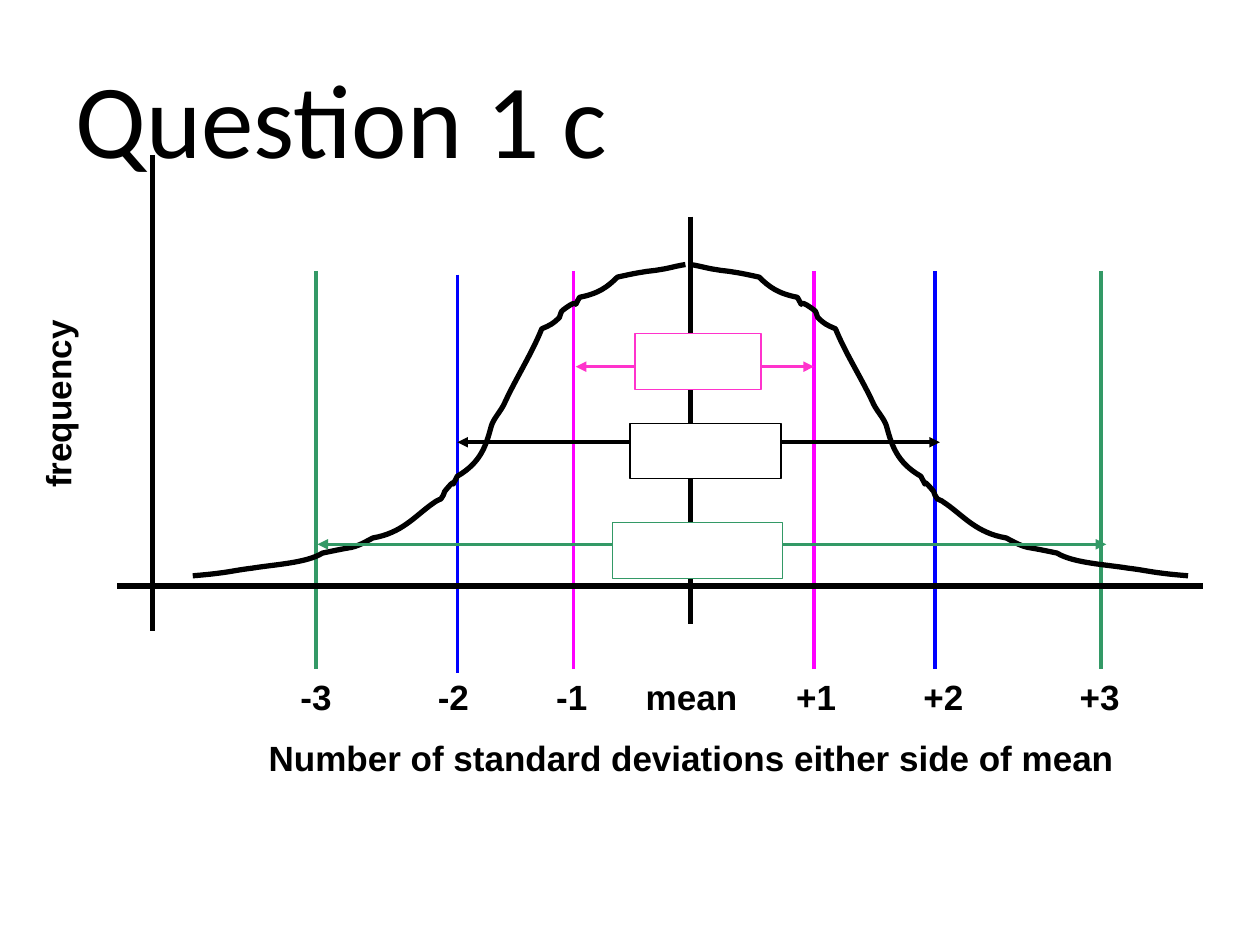
from dataclasses import dataclass

from lxml.etree import SubElement
from pptx import Presentation
from pptx.dml.color import RGBColor
from pptx.enum.shapes import MSO_CONNECTOR, MSO_SHAPE
from pptx.enum.text import MSO_ANCHOR, PP_ALIGN
from pptx.oxml.ns import qn
from pptx.util import Inches, Pt


@dataclass(frozen=True)
class Theme:
    black: str = "000000"
    white: str = "FFFFFF"
    green: str = "339966"
    blue: str = "0000FF"
    magenta: str = "FF00FF"
    pink: str = "FF33CC"
    title_size: int = 60
    label_size: int = 20
    axis_width: float = 3
    marker_width: float = 2
    outline_width: float = 0.75


THEME = Theme()

TITLE = "Question 1 c"
VERTICAL_LABEL = "frequency"
HORIZONTAL_LABEL = "Number of standard deviations either side of mean"

MEAN = 5.48
LABEL_CENTER = 5.49
# label, label centre, marker x, marker top, colour
DEVIATIONS = [
    ("-3", 2.51, 2.51, 2.15, THEME.green),
    ("-2", 3.6, 3.63, 2.18, THEME.blue),
    ("-1", 4.54, 4.55, 2.15, THEME.magenta),
    ("mean", LABEL_CENTER, None, None, None),
    ("+1", 6.48, 6.46, 2.15, THEME.magenta),
    ("+2", 7.49, 7.42, 2.15, THEME.blue),
    ("+3", 8.73, 8.74, 2.15, THEME.green),
]
MARKER_HEIGHT = 3.16

# start and end of each axis line
AXES = [
    ((0.93, 4.65), (9.55, 4.65)),
    ((MEAN, 1.72), (MEAN, 4.95)),
    ((1.21, 1.23), (1.21, 5.01)),
]

# arrow from, arrow to, arrow y, box left, box top, box width, colour
RANGES = [
    (2.52, 8.78, 4.32, 4.86, 4.15, 1.35, THEME.green),
    (4.57, 6.46, 2.91, 5.04, 2.65, 1.0, THEME.pink),
    (3.63, 7.46, 3.51, 5.0, 3.36, 1.2, THEME.black),
]
RANGE_BOX_HEIGHT = 0.44

# Left half of the bell: a start, then two controls and an end per segment
BELL_START = (5.44, 2.1)
BELL_SEGMENTS = [
    ((5.37, 2.11), (5.31, 2.13), (5.24, 2.14)),
    ((5.19, 2.15), (5.15, 2.15), (5.1, 2.16)),
    ((5.03, 2.17), (4.9, 2.2), (4.9, 2.2)),
    ((4.82, 2.28), (4.75, 2.33), (4.6, 2.36)),
    ((4.52, 2.5), (4.64, 2.33), (4.47, 2.46)),
    ((4.45, 2.47), (4.45, 2.5), (4.44, 2.52)),
    ((4.39, 2.57), (4.37, 2.58), (4.3, 2.61)),
    ((4.22, 2.81), (4.09, 3.01), (4, 3.21)),
    ((3.97, 3.27), (3.92, 3.32), (3.9, 3.38)),
    ((3.86, 3.53), (3.82, 3.67), (3.63, 3.78)),
    ((3.55, 3.93), (3.66, 3.74), (3.53, 3.9)),
    ((3.52, 3.92), (3.52, 3.94), (3.5, 3.96)),
    ((3.48, 3.97), (3.45, 3.98), (3.43, 4)),
    ((3.29, 4.1), (3.19, 4.23), (2.96, 4.27)),
    ((2.9, 4.3), (2.84, 4.34), (2.76, 4.35)),
    ((2.7, 4.36), (2.56, 4.39), (2.56, 4.39)),
    ((2.43, 4.47), (2.18, 4.48), (2, 4.51)),
    ((1.91, 4.52), (1.82, 4.54), (1.73, 4.55)),
    ((1.66, 4.56), (1.53, 4.57), (1.53, 4.57)),
]
MIRROR_STRETCH = 1.01

LABEL_BOX = (0.96, 5.31, 8.33, 0.93)
INSET = 0.1


def write_text(frame, lines, font="Arial", size=THEME.label_size, bold=True,
               gap=0, tabs=()):
    """Fill a frame with one paragraph per line; tabs are centred stops in inches per line."""
    frame.word_wrap = True
    for index, line in enumerate(lines):
        para = frame.paragraphs[0] if index == 0 else frame.add_paragraph()
        para.alignment = PP_ALIGN.LEFT
        para.space_before = Pt(gap if index else 0)
        span = para.add_run()
        span.text = line
        span.font.name = font
        span.font.size = Pt(size)
        span.font.bold = bold
        span.font.color.rgb = RGBColor.from_string(THEME.black)
        if tabs:
            stops = SubElement(para._p.get_or_add_pPr(), qn("a:tabLst"))
            for stop in tabs[index]:
                SubElement(stops, qn("a:tab"), pos=str(Inches(stop)), algn="ctr")


def set_line(shape, color, width):
    shape.line.color.rgb = RGBColor.from_string(color)
    shape.line.width = Pt(width)


def add_line(page, start, end, color, width, arrows=False):
    line = page.shapes.add_connector(
        MSO_CONNECTOR.STRAIGHT, *(Inches(value) for value in (*start, *end)))
    set_line(line, color, width)
    SubElement(line._element.spPr, qn("a:effectLst"))
    if arrows:
        outline = line.line._get_or_add_ln()
        for tag in ("a:headEnd", "a:tailEnd"):
            SubElement(outline, qn(tag), type="triangle")


def mirror(point):
    """Reflect a point of the left half onto the right half."""
    x, y = point
    return MEAN + (BELL_START[0] - x) * MIRROR_STRETCH, y


def add_curve(page, start, segments):
    """Draw a freeform through the segment ends, then bend each step with its controls."""
    def to_emu(point):
        return tuple(Inches(value) for value in point)

    builder = page.shapes.build_freeform(*to_emu(start))
    builder.add_line_segments([to_emu(segment[-1]) for segment in segments], close=False)
    curve = builder.convert_to_shape()
    steps = list(curve._element.iter(qn("a:lnTo")))
    for step, segment in zip(steps, segments):
        step.clear()
        bend = step.makeelement(qn("a:cubicBezTo"))
        for x, y in map(to_emu, segment):
            SubElement(bend, qn("a:pt"), x=str(x - curve.left), y=str(y - curve.top))
        step.getparent().replace(step, bend)
    curve.shadow.inherit = False
    curve.fill.background()
    set_line(curve, THEME.black, THEME.axis_width)


def add_text_box(page, area, lines, **text_format):
    box = page.shapes.add_textbox(*(Inches(value) for value in area))
    write_text(box.text_frame, lines, **text_format)
    return box


def main():
    deck = Presentation()
    deck.slide_width, deck.slide_height = Inches(10), Inches(7.5)
    page = deck.slides.add_slide(deck.slide_layouts[5])

    title = page.shapes.title
    title.left, title.top, title.width, title.height = (
        Inches(value) for value in (0.5, 0.37, 9, 1.11))
    title.text_frame.vertical_anchor = MSO_ANCHOR.MIDDLE
    write_text(title.text_frame, [TITLE], font="Calibri",
               size=THEME.title_size, bold=False)

    text_left = LABEL_BOX[0] + INSET
    label_stops = [center - text_left for _, center, *_ in DEVIATIONS]
    scale_line = "".join("\t" + label for label, *_ in DEVIATIONS)
    add_text_box(page, LABEL_BOX, [scale_line, "\t" + HORIZONTAL_LABEL],
                 gap=11, tabs=[label_stops, [LABEL_CENTER - text_left]])

    for _, _, x, top, color in DEVIATIONS:
        if x is not None:
            add_line(page, (x, top), (x, top + MARKER_HEIGHT), color, THEME.marker_width)

    add_curve(page, BELL_START, BELL_SEGMENTS)
    add_curve(page, mirror(BELL_START),
              [tuple(map(mirror, segment)) for segment in BELL_SEGMENTS])
    for start, end in AXES:
        add_line(page, start, end, THEME.black, THEME.axis_width)

    add_text_box(page, (-0.66, 2.64, 2.23, 0.43), [VERTICAL_LABEL]).rotation = 270

    for start, end, y, left, top, width, color in RANGES:
        add_line(page, (start, y), (end, y), color, THEME.marker_width, arrows=True)
        box = page.shapes.add_shape(MSO_SHAPE.RECTANGLE, *(
            Inches(value) for value in (left, top, width, RANGE_BOX_HEIGHT)))
        box.shadow.inherit = False
        box.fill.solid()
        box.fill.fore_color.rgb = RGBColor.from_string(THEME.white)
        set_line(box, color, THEME.outline_width)

    deck.save("out.pptx")


if __name__ == "__main__":
    main()
